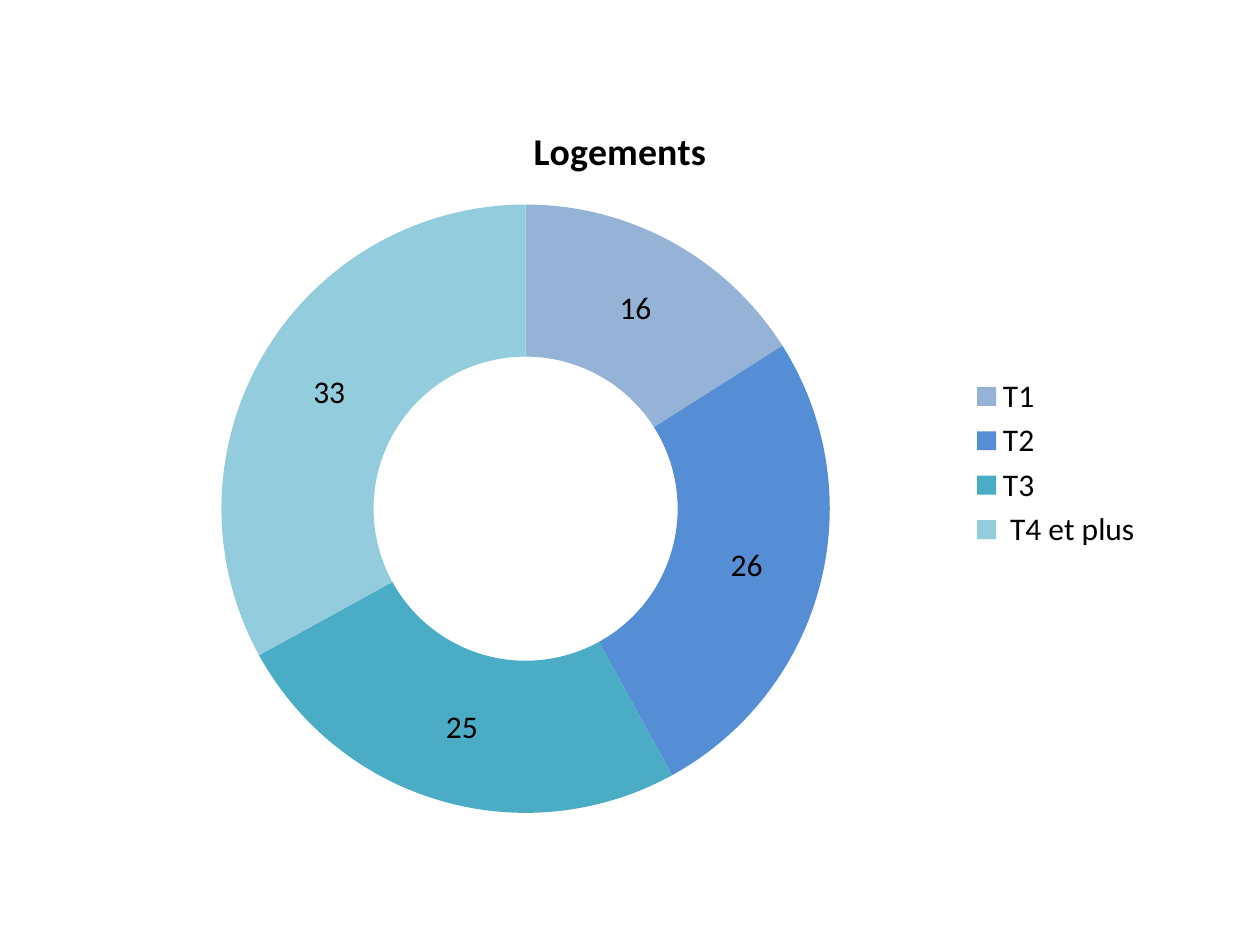
from pptx import Presentation
from pptx.chart.data import CategoryChartData
from pptx.dml.color import RGBColor
from pptx.enum.chart import XL_CHART_TYPE, XL_LEGEND_POSITION
from pptx.util import Pt


def color(hex_string):
    return RGBColor.from_string(hex_string)


class SlideBuilder:
    font_name = "Calibri"
    text_color = "000000"
    text_size = 18
    title_size = 21.6

    def __init__(self, deck):
        self.slide = deck.slides.add_slide(deck.slide_layouts[6])

    def style_font(self, font, size, bold=False):
        font.name = self.font_name
        font.size = Pt(size)
        font.bold = bold
        font.color.rgb = color(self.text_color)

    def add_doughnut(self, left, top, width, height, title, slices):
        data = CategoryChartData()
        data.categories = [name for name, value, fill in slices]
        data.add_series(title, [value for name, value, fill in slices])
        frame = self.slide.shapes.add_chart(
            XL_CHART_TYPE.DOUGHNUT, Pt(left), Pt(top), Pt(width), Pt(height), data
        )
        chart = frame.chart
        self.style_font(chart.font, self.text_size)
        self.add_chart_title(chart, title)
        self.add_legend(chart)
        self.style_slices(chart.plots[0], slices)

    def add_chart_title(self, chart, title):
        chart.has_title = True
        span = chart.chart_title.text_frame.paragraphs[0].add_run()
        span.text = title
        self.style_font(span.font, self.title_size, bold=True)
        chart.chart_title.include_in_layout = False

    def add_legend(self, chart):
        chart.has_legend = True
        chart.legend.position = XL_LEGEND_POSITION.RIGHT
        chart.legend.include_in_layout = False
        self.style_font(chart.legend.font, self.text_size)

    def style_slices(self, plot, slices):
        plot.vary_by_categories = True
        plot.has_data_labels = True
        labels = plot.data_labels
        labels.show_value = True
        labels.show_percentage = False
        self.style_font(labels.font, self.text_size)
        for index, (name, value, fill) in enumerate(slices):
            point_format = plot.series[0].points[index].format
            point_format.fill.solid()
            point_format.fill.fore_color.rgb = color(fill)
            point_format.line.fill.background()


def main():
    deck = Presentation()
    deck.slide_width = Pt(720)
    deck.slide_height = Pt(540)
    housing_slices = [
        ("T1", 16, "95B3D7"),
        ("T2", 26, "558ED5"),
        ("T3", 25, "4BACC6"),
        (" T4 et plus", 33, "93CDDD"),
    ]
    builder = SlideBuilder(deck)
    builder.add_doughnut(48.24, 54.72, 612, 419.76, "Logements", housing_slices)
    deck.save("out.pptx")


if __name__ == "__main__":
    main()
